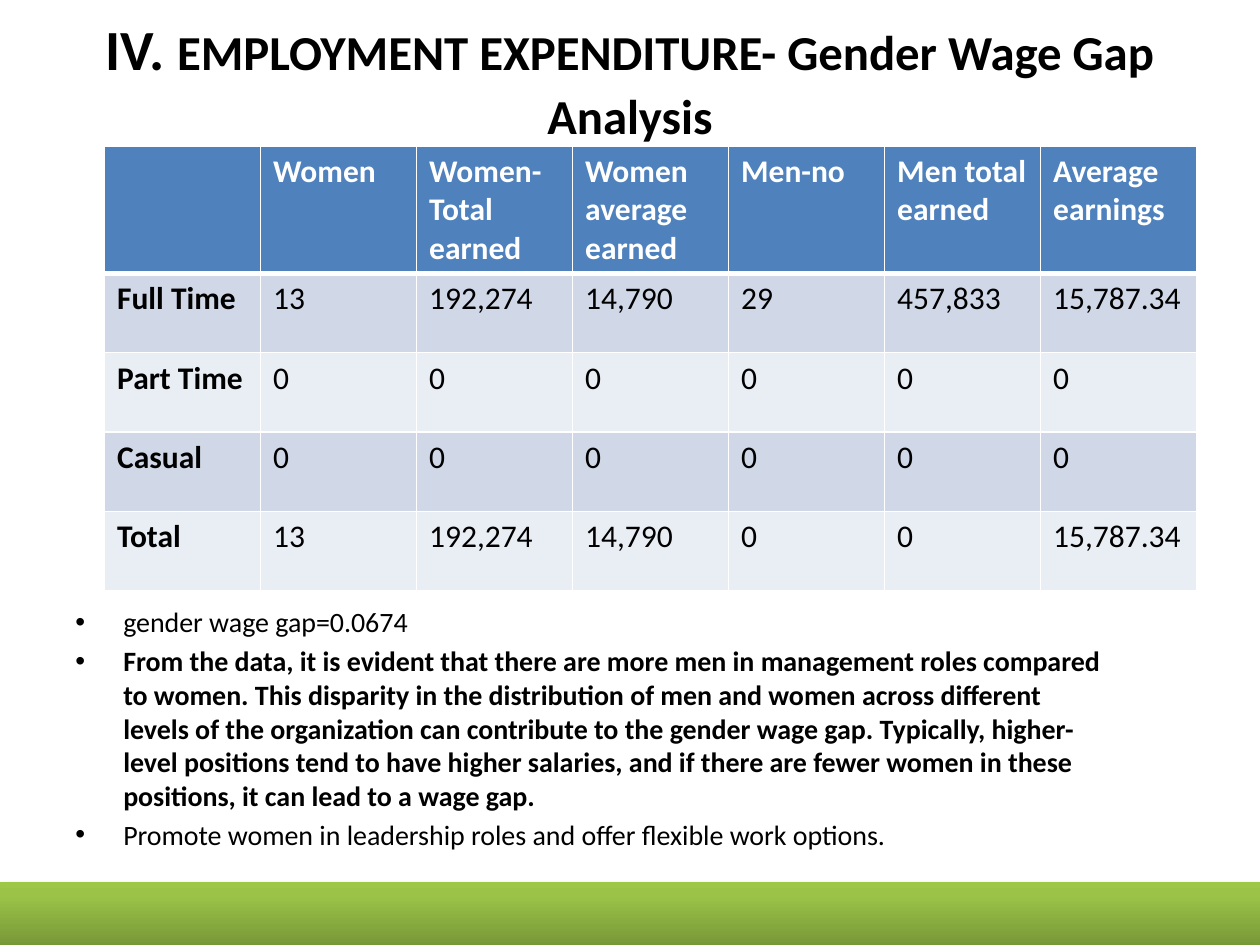
from copy import deepcopy

from lxml import etree
from pptx import Presentation
from pptx.dml.color import RGBColor
from pptx.enum.shapes import MSO_SHAPE
from pptx.enum.text import MSO_ANCHOR, PP_ALIGN
from pptx.oxml import parse_xml
from pptx.oxml.ns import nsdecls, qn
from pptx.util import Inches, Pt

RECTANGLE = MSO_SHAPE.RECTANGLE
MIDDLE = MSO_ANCHOR.MIDDLE
CENTER = PP_ALIGN.CENTER

TITLE = [("IV. ", 32.4), ("EMPLOYMENT EXPENDITURE- Gender Wage Gap Analysis", 27.9)]
WAGES = [
    ["", "Women", "Women- Total earned", "Women average earned", "Men-no",
     "Men total earned", "Average earnings"],
    ["Full Time", "13", "192,274", "14,790", "29", "457,833", "15,787.34"],
    ["Part Time"] + ["0"] * 6,
    ["Casual"] + ["0"] * 6,
    ["Total", "13", "192,274", "14,790", "0", "0", "15,787.34"],
]
# Each point is its wording and whether it is bold
POINTS = [
    ("gender wage gap=0.0674", False),
    ("From the data, it is evident that there are more men in management roles "
     "compared to women. This disparity in the distribution of men and women across "
     "different levels of the organization can contribute to the gender wage gap. "
     "Typically, higher-level positions tend to have higher salaries, and if there "
     "are fewer women in these positions, it can lead to a wage gap.", True),
    ("Promote women in leadership roles and offer flexible work options.", False),
]


def color(hex_code):
    return RGBColor.from_string(hex_code)


class SlideBuilder:
    font = "Calibri"
    ink = "000000"
    white = "FFFFFF"
    header_fill = "4F81BD"
    row_fills = ("D0D8E8", "E9EDF4")

    def __init__(self, slide):
        self.slide = slide

    def style(self, span, size, bold=False, ink=None):
        span.font.name = self.font
        span.font.size = Pt(size)
        span.font.bold = bold
        span.font.color.rgb = color(ink or self.ink)

    def title(self, parts, left, top, width, height):
        box = self.slide.shapes.title
        box.left, box.top, box.width, box.height = left, top, width, height
        frame = box.text_frame
        frame.word_wrap = True
        frame.vertical_anchor = MIDDLE
        # The deep bottom inset lifts both lines clear of the table
        frame.margin_bottom = Inches(0.68)
        para = frame.paragraphs[0]
        para.alignment = CENTER
        para.line_spacing = 1.07
        for wording, size in parts:
            span = para.add_run()
            span.text = wording
            self.style(span, size, bold=True)

    def band(self, stops, left, top, width, height):
        band = self.slide.shapes.add_shape(RECTANGLE, left, top, width, height)
        band.line.fill.background()
        band.fill.gradient()
        band.fill.gradient_angle = 90
        # The default gradient has two stops, so a third is added
        stop_list = band.fill._fill._gradFill.find(qn("a:gsLst"))
        stop_list.append(deepcopy(stop_list[-1]))
        for stop, (position, hex_code) in zip(band.fill.gradient_stops, stops):
            stop.position = position
            stop.color.rgb = color(hex_code)
        band.shadow.inherit = False
        effects = band._element.spPr.find(qn("a:effectLst"))
        effects.append(parse_xml(
            f'<a:outerShdw {nsdecls("a")} blurRad="{Pt(3.1)}" dist="{Pt(1.8)}" '
            'dir="5400000" rotWithShape="0"><a:srgbClr val="000000">'
            '<a:alpha val="35000"/></a:srgbClr></a:outerShdw>'))

    def bullets(self, points, left, top, width, height):
        frame = self.slide.shapes.add_textbox(left, top, width, height).text_frame
        frame.word_wrap = True
        frame.text = "\n".join(wording for wording, _ in points)
        for para, (_, bold) in zip(frame.paragraphs, points):
            para.space_before = Pt(3.2)
            self.style(para.runs[0], 16, bold)
            properties = para._p.get_or_add_pPr()
            properties.set("marL", str(Inches(0.38)))
            properties.set("indent", str(-Inches(0.38)))
            etree.SubElement(properties, qn("a:buFont"), typeface="Arial")
            etree.SubElement(properties, qn("a:buChar"), char="•")

    def borders(self, cell, top, bottom):
        properties = cell._tc.get_or_add_tcPr()
        for side, width in (("L", 1), ("R", 1), ("T", top), ("B", bottom)):
            properties.append(parse_xml(
                f'<a:ln{side} {nsdecls("a")} w="{Pt(width)}"><a:solidFill>'
                f'<a:srgbClr val="{self.white}"/></a:solidFill></a:ln{side}>'))

    def table(self, rows, left, top, width, header_height, row_height):
        height = header_height + row_height * (len(rows) - 1)
        table = self.slide.shapes.add_table(
            len(rows), len(rows[0]), left, top, width, height).table
        for number, row in enumerate(rows):
            header = number == 0
            table.rows[number].height = header_height if header else row_height
            fill = self.header_fill if header else self.row_fills[(number - 1) % 2]
            for column, wording in enumerate(row):
                cell = table.cell(number, column)
                # A thick rule parts the header from the first row
                self.borders(cell, top=3 if number == 1 else 1,
                             bottom=3 if header else 1)
                cell.fill.solid()
                cell.fill.fore_color.rgb = color(fill)
                cell.text = wording
                for span in cell.text_frame.paragraphs[0].runs:
                    self.style(span, 18, bold=header or column == 0,
                               ink=self.white if header else self.ink)


def main():
    deck = Presentation()
    deck.slide_width, deck.slide_height = Inches(10), Inches(7.5)
    page = SlideBuilder(deck.slides.add_slide(deck.slide_layouts[5]))

    # Heading
    page.title(TITLE, Inches(0.5), Inches(0.3), Inches(9), Inches(1.25))

    # Green footer band
    page.band([(0, "779737"), (0.8, "9BC348"), (1, "9DC746")],
              Inches(0), Inches(7), Inches(10.21), Inches(0.51))

    # Findings under the table
    page.bullets(POINTS, Inches(0.5), Inches(4.75), Inches(8.42), Inches(2.48))

    # Wage table
    page.table(WAGES, Inches(0.83), Inches(1.16), Inches(8.67),
               Inches(1.01), Inches(0.63))

    deck.save("out.pptx")


if __name__ == "__main__":
    main()
